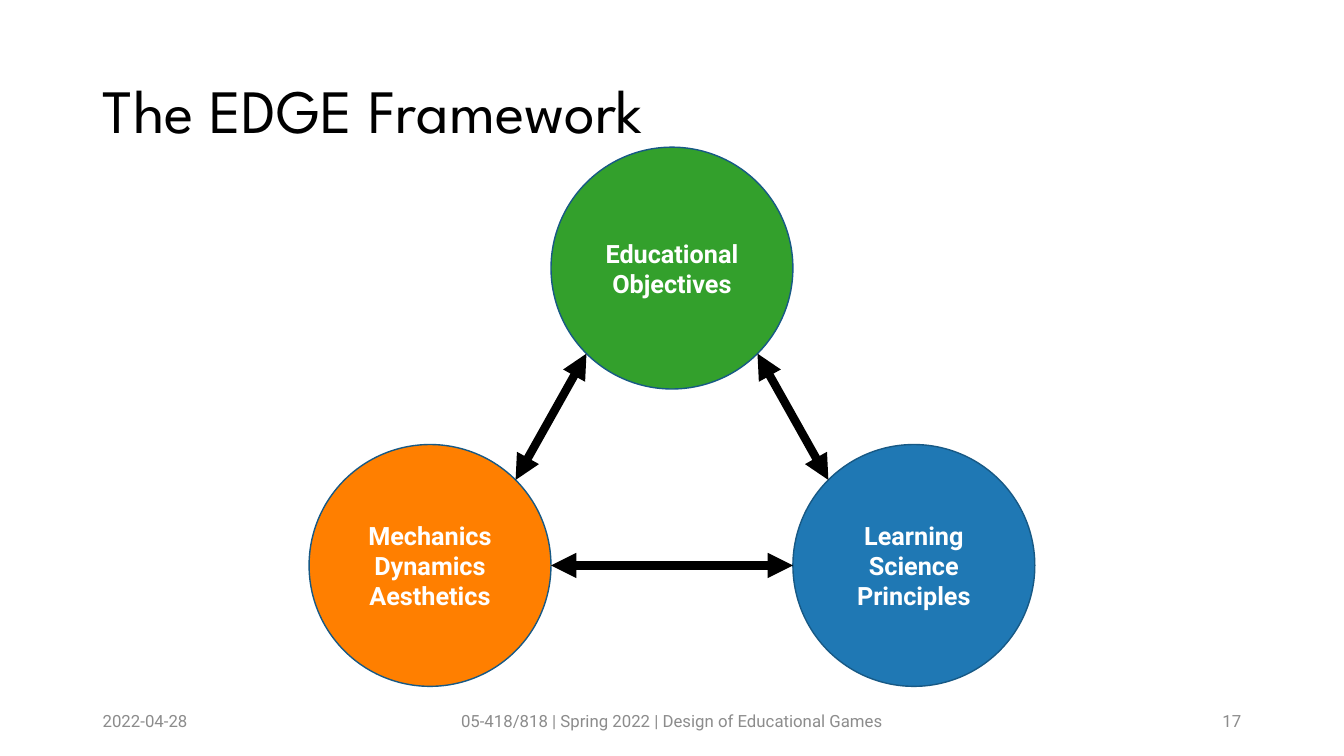
import math
from dataclasses import dataclass

from pptx import Presentation, util as u
from pptx.dml.color import RGBColor
from pptx.enum import shapes, text
from pptx.oxml.ns import qn
from lxml import etree


@dataclass(frozen=True)
class Theme:
    heading_font: str = "League Spartan"
    body_font: str = "Roboto"
    black: str = "000000"
    white: str = "FFFFFF"
    grey: str = "8C8C8C"
    outline: str = "175985"
    green: str = "33A02C"
    blue: str = "1F78B4"
    orange: str = "FF7F00"
    title_size: int = 44
    label_size: int = 18
    footer_size: int = 12


class SlideBuilder:
    """Draws on one slide; lengths are shares of the slide's width and height."""

    def __init__(self, presentation, theme):
        self.theme = theme
        self.width = presentation.slide_width
        self.height = presentation.slide_height
        self.slide = presentation.slides.add_slide(presentation.slide_layouts[5])

    def box(self, left, top, width, height):
        return (round(left * self.width), round(top * self.height),
                round(width * self.width), round(height * self.height))

    def set_text(self, shape, words, font_name, size, color, alignment, bold=False):
        frame = shape.text_frame
        frame.text = words
        frame.word_wrap = True
        frame.auto_size = text.MSO_AUTO_SIZE.NONE
        frame.vertical_anchor = text.MSO_ANCHOR.MIDDLE
        paragraph = frame.paragraphs[0]
        paragraph.alignment = alignment
        font = paragraph.font
        font.name, font.size, font.bold = font_name, u.Pt(size), bold
        font.color.rgb = RGBColor.from_string(color)
        return paragraph

    def title(self, words, *area):
        shape = self.slide.shapes.title
        shape.left, shape.top, shape.width, shape.height = self.box(*area)
        paragraph = self.set_text(shape, words, self.theme.heading_font,
                                  self.theme.title_size, self.theme.black,
                                  text.PP_ALIGN.LEFT)
        paragraph.line_spacing = 0.9

    def footer(self, words, alignment, *area):
        shape = self.slide.shapes.add_textbox(*self.box(*area))
        self.set_text(shape, words, self.theme.body_font, self.theme.footer_size,
                      self.theme.grey, alignment)

    def circle(self, words, color, center_x, center_y, diameter):
        """Add a labelled circle whose diameter is a share of the slide's width."""
        side = round(diameter * self.width)
        shape = self.slide.shapes.add_shape(
            shapes.MSO_SHAPE.OVAL, round(center_x * self.width - side / 2),
            round(center_y * self.height - side / 2), side, side)
        shape.shadow.inherit = False
        shape.fill.solid()
        shape.fill.fore_color.rgb = RGBColor.from_string(color)
        shape.line.color.rgb = RGBColor.from_string(self.theme.outline)
        shape.line.width = u.Pt(1)
        self.set_text(shape, words, self.theme.body_font, self.theme.label_size,
                      self.theme.white, text.PP_ALIGN.CENTER, bold=True)
        return shape

    def rim_point(self, circle, degrees):
        """Return the point on a circle's edge, counted clockwise from the right."""
        radius, angle = circle.width / 2, math.radians(degrees)
        return (round(circle.left + radius * (1 + math.cos(angle))),
                round(circle.top + radius * (1 + math.sin(angle))))

    def double_arrow(self, first, first_degrees, second, second_degrees):
        connector = self.slide.shapes.add_connector(
            shapes.MSO_CONNECTOR.STRAIGHT, *self.rim_point(first, first_degrees),
            *self.rim_point(second, second_degrees))
        connector.line.color.rgb = RGBColor.from_string(self.theme.black)
        connector.line.width = u.Pt(6)
        properties = connector._element.spPr
        line = properties.find(qn("a:ln"))
        for end in ("a:headEnd", "a:tailEnd"):
            etree.SubElement(line, qn(end), type="triangle")
        etree.SubElement(properties, qn("a:effectLst"))


def main():
    presentation = Presentation()
    presentation.slide_width, presentation.slide_height = u.Inches(13.33), u.Inches(7.5)
    theme = Theme()
    builder = SlideBuilder(presentation, theme)

    margin = 0.92 / 13.33
    content = 1 - 2 * margin
    builder.title("The EDGE Framework", margin, 0.4 / 7.5, content, 1.45 / 7.5)

    diameter = 0.18
    upper, lower = 2.66 / 7.5, 5.61 / 7.5
    objectives = builder.circle("Educational Objectives", theme.green, 0.5, upper, diameter)
    learning = builder.circle("Learning Science Principles", theme.blue,
                              0.5 + diameter, lower, diameter)
    mechanics = builder.circle("Mechanics Dynamics Aesthetics", theme.orange,
                               0.5 - diameter, lower, diameter)
    builder.double_arrow(mechanics, 0, learning, 180)
    builder.double_arrow(objectives, 135, mechanics, -45)
    builder.double_arrow(objectives, 45, learning, -135)

    side, middle = 3 / 13.33, 4.5 / 13.33
    align = text.PP_ALIGN
    for words, alignment, left, width in (
            ("2022-04-28", align.LEFT, margin, side),
            ("05-418/818 | Spring 2022 | Design of Educational Games",
             align.CENTER, 0.5 - middle / 2, middle),
            ("17", align.RIGHT, 1 - margin - side, side)):
        builder.footer(words, alignment, left, 6.95 / 7.5, width, 0.4 / 7.5)

    presentation.save("out.pptx")


if __name__ == "__main__":
    main()
